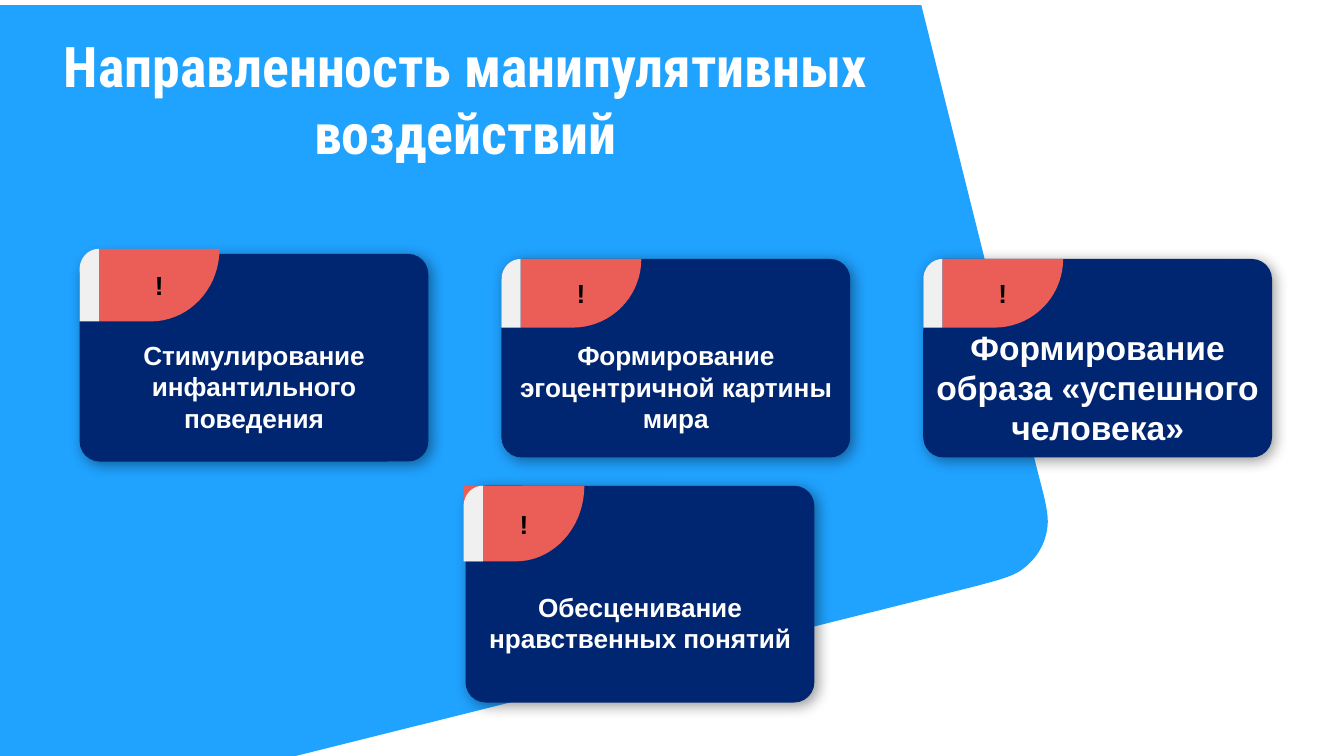
"""Build the slide on where manipulative influence is aimed."""
from dataclasses import dataclass
from math import cos, radians, sin

from lxml import etree
from pptx import Presentation
from pptx.dml.color import RGBColor
from pptx.enum.shapes import MSO_SHAPE
from pptx.enum.text import MSO_ANCHOR, PP_ALIGN
from pptx.oxml.ns import qn
from pptx.util import Pt

ROUND = MSO_SHAPE.ROUNDED_RECTANGLE
MIDDLE = MSO_ANCHOR.MIDDLE
CENTER = PP_ALIGN.CENTER
Point = tuple[float, float]


@dataclass(frozen=True)
class Theme:
    """Hold colours, fonts and type sizes."""
    sky: str = "20A2FF"
    navy: str = "002671"
    coral: str = "EB5E57"
    pale: str = "F1F0F0"
    white: str = "FFFFFF"
    black: str = "000000"
    head: str = "Roboto Condensed"
    body: str = "Arial"
    title: float = 40
    label: float = 18.67
    large: float = 24


@dataclass(frozen=True)
class Card:
    """Describe a card and the tag in its corner."""
    text: str
    left: float
    top: float
    height: float
    tag_left: float
    tag_top: float
    tag_height: float
    indent: float
    size: float


THEME = Theme()
WIDTH, RADIUS, PITCH = 249.1, 14.4, 301.3
STRIP, TAG, BEND = 13.7, 86.2, 49
FIRST = 56.9
SECOND, THIRD = FIRST + PITCH, FIRST + 2 * PITCH
CARDS = (
    Card("Стимулирование инфантильного поведения", FIRST, 181.4, 148.3,
         FIRST, 177.8, 51.8, STRIP, THEME.label),
    Card("Формирование эгоцентричной картины мира", SECOND, 185, 141.8,
         SECOND, 185, 49, STRIP, THEME.label),
    Card("Формирование образа «успешного человека»", THIRD, 185, 141.8,
         THIRD, 185, 49, STRIP, THEME.large),
    Card("Обесценивание нравственных понятий", 332.6, 347, 154.8,
         331.2, 347, 54, 0, THEME.label),
)


def curve(a: Point, b: Point, c: Point, d: Point) -> list[Point]:
    """Sample a cubic curve."""
    steps = [i / 12 for i in range(13)]
    return [tuple((1 - t) ** 3 * p + 3 * t * (1 - t) ** 2 * q
                  + 3 * t * t * (1 - t) * r + t ** 3 * s
                  for p, q, r, s in zip(a, b, c, d)) for t in steps]


def arc(x: float, y: float, wide: float, high: float, start: int) -> list[Point]:
    """Sample a quarter of an ellipse, clockwise from start degrees."""
    turns = [radians(start + 5 * i) for i in range(19)]
    return [(x + wide * cos(t), y + high * sin(t)) for t in turns]


def paint(shape, color: str) -> None:
    """Give a shape a plain fill without line or shadow."""
    shape.shadow.inherit = False
    shape.fill.solid()
    shape.fill.fore_color.rgb = RGBColor.from_string(color)
    shape.line.fill.background()


def outline(shapes, points: list[Point], color: str):
    """Draw a closed filled outline."""
    spots = [(Pt(x), Pt(y)) for x, y in points]
    pen = shapes.build_freeform(*spots[0])
    pen.add_line_segments(spots[1:], close=True)
    shape = pen.convert_to_shape()
    paint(shape, color)
    return shape


def shade(shape) -> None:
    """Cast a soft shadow to the lower right."""
    effects = shape._element.spPr.find(qn("a:effectLst"))
    outer = etree.SubElement(effects, qn("a:outerShdw"), blurRad=str(Pt(10)),
                             dist=str(Pt(3)), dir="2700000", algn="tl",
                             rotWithShape="0")
    color = etree.SubElement(outer, qn("a:srgbClr"), val=THEME.black)
    etree.SubElement(color, qn("a:alpha"), val="40000")


def write(shape, text: str, *, size: float, color: str, font: str = THEME.body,
          anchor=MIDDLE, side: float = 7.2, top: float = 3.6,
          bottom: float = 3.6) -> None:
    """Put bold centred text into a shape."""
    frame = shape.text_frame
    frame.word_wrap = True
    frame.vertical_anchor = anchor
    frame.margin_left = frame.margin_right = Pt(side)
    frame.margin_top, frame.margin_bottom = Pt(top), Pt(bottom)
    para = frame.paragraphs[0]
    para.alignment = CENTER
    run = para.add_run()
    run.text = text
    run.font.name, run.font.size, run.font.bold = font, Pt(size), True
    run.font.color.rgb = RGBColor.from_string(color)


def place(shapes, card: Card) -> None:
    """Draw one card with its tag as a group."""
    parts = shapes.add_group_shape().shapes
    panel = parts.add_shape(ROUND, Pt(card.left), Pt(card.top),
                            Pt(WIDTH), Pt(card.height))
    panel.adjustments[0] = RADIUS / card.height
    paint(panel, THEME.navy)
    shade(panel)
    write(panel, card.text, size=card.size, color=THEME.white,
          side=3, top=41, bottom=0)

    left, top = card.tag_left, card.tag_top
    start, base = left + card.indent, top + card.tag_height
    right = start + TAG
    bend = arc(right - BEND, top, BEND, card.tag_height, 0)
    tag = outline(parts, [(start, top), *bend, (start, base)], THEME.coral)
    write(tag, "!", size=THEME.label, color=THEME.black)

    edge = left + STRIP
    bend = arc(edge, top + RADIUS, STRIP, RADIUS, 180)
    outline(parts, [(left, base), *bend, (edge, base)], THEME.pale)


def main() -> None:
    """Build and save the slide."""
    deck = Presentation()
    deck.slide_width, deck.slide_height = Pt(960), Pt(540)
    shapes = deck.slides.add_slide(deck.slide_layouts[6]).shapes
    field = [(0, 3.6), (0, 540), (211.2, 540),
             *curve((692.6, 419.8), (712.1, 414.7), (723.6, 411.8), (730.1, 406.8)),
             *curve((730.1, 406.8), (740.2, 399.6), (746.6, 388.8), (748.1, 377.3)),
             *curve((748.1, 377.3), (749.5, 368.6), (746.6, 357.1), (741.6, 338.4)),
             (658.1, 3.6)]
    outline(shapes, field, THEME.sky)
    title = shapes.add_textbox(Pt(18), Pt(18.7), Pt(628.6), Pt(104.4))
    write(title, "Направленность манипулятивных воздействий", size=THEME.title,
          color=THEME.white, font=THEME.head, anchor=MSO_ANCHOR.TOP)
    for card in CARDS:
        place(shapes, card)
    deck.save("out.pptx")


if __name__ == "__main__":
    main()
